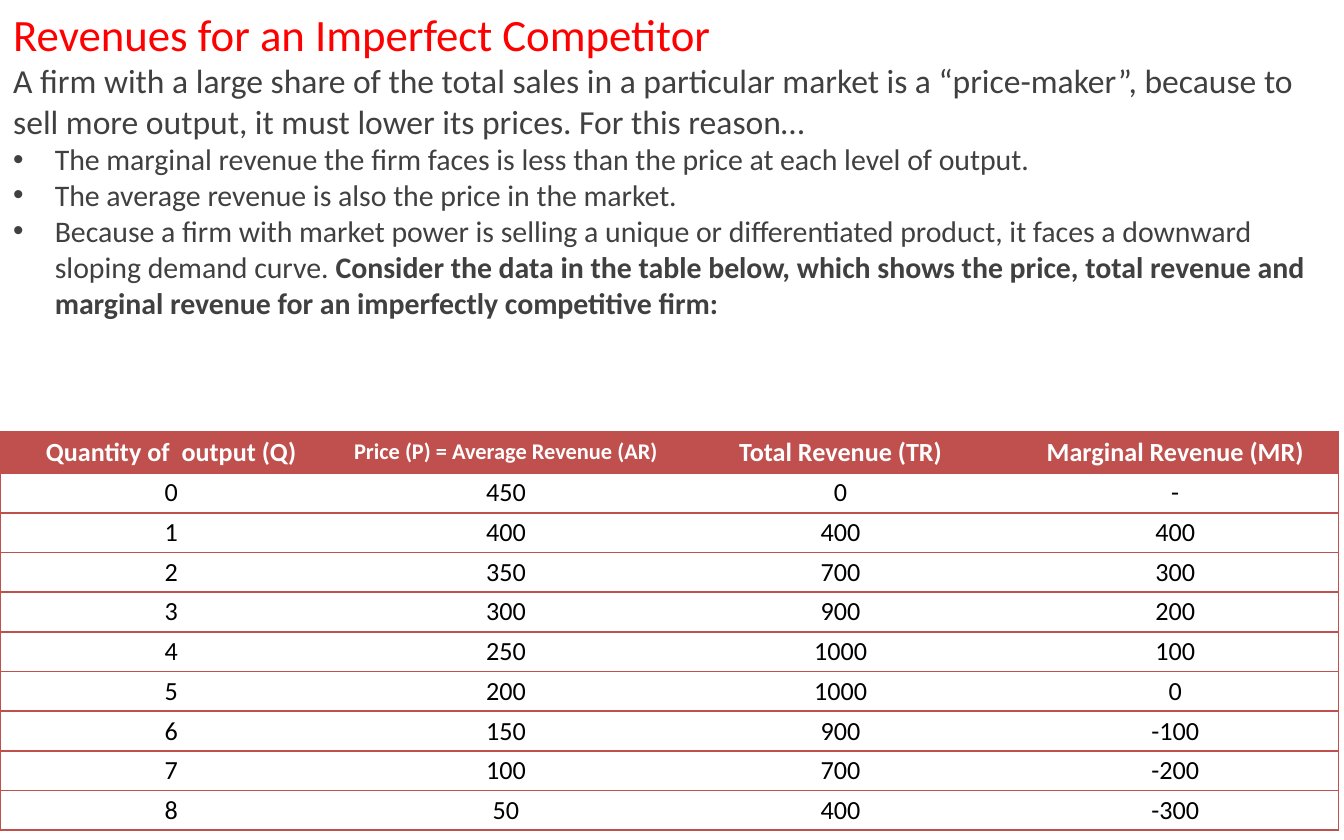
"""Build a slide on the revenues of an imperfect competitor."""
from lxml import etree
from pptx import Presentation
from pptx.dml.color import RGBColor
from pptx.enum.text import MSO_ANCHOR, MSO_AUTO_SIZE, PP_ALIGN
from pptx.oxml.ns import qn
from pptx.util import Inches, Pt

CENTER = PP_ALIGN.CENTER
TOP, MIDDLE = MSO_ANCHOR.TOP, MSO_ANCHOR.MIDDLE
GROW = MSO_AUTO_SIZE.SHAPE_TO_FIT_TEXT
FONT = "Calibri"
NO_STYLE = "{2D5ABB26-0587-4C30-8999-92F81FD0307C}"
COLORS = {"title": "FF0000", "body": "404040", "accent": "C0504D",
          "white": "FFFFFF", "black": "000000"}


def style_run(run, size, color, bold=False):
    run.font.name = FONT
    run.font.size = Pt(size)
    run.font.bold = bold
    run.font.color.rgb = RGBColor.from_string(COLORS[color])


def add_border(cell, side):
    line = etree.SubElement(cell._tc.get_or_add_tcPr(), qn(f"a:ln{side}"), w=str(Pt(1)))
    fill = etree.SubElement(line, qn("a:solidFill"))
    etree.SubElement(fill, qn("a:srgbClr"), val=COLORS["accent"])


prs = Presentation()
prs.slide_width, prs.slide_height = Inches(10), Inches(6.25)
slide = prs.slides.add_slide(prs.slide_layouts[6])

PARAGRAPHS = [
    (24, "title", False, ["Revenues for an Imperfect Competitor"]),
    (18, "body", False, [
        "A firm with a large share of the total sales in a particular market is a “price-maker”, "
        "because to sell more output, it must lower its prices. For this reason…"]),
    (16, "body", True, [
        "The marginal revenue the firm faces is less than the price at each level of output."]),
    (16, "body", True, ["The average revenue is also the price in the market."]),
    (16, "body", True, [
        "Because a firm with market power is selling a unique or differentiated product, "
        "it faces a downward sloping demand curve. ",
        "Consider the data in the table below, which shows the price, total revenue and "
        "marginal revenue for an imperfectly competitive firm:"]),
]
explanation = slide.shapes.add_textbox(0, 0, Inches(10), Inches(2.46)).text_frame
explanation.word_wrap = True
explanation.auto_size = GROW
for index, (size, color, bulleted, parts) in enumerate(PARAGRAPHS):
    paragraph = explanation.add_paragraph() if index else explanation.paragraphs[0]
    for position, part in enumerate(parts):
        run = paragraph.add_run()
        run.text = part
        style_run(run, size, color, bold=position > 0)
    if bulleted:
        properties = paragraph._p.get_or_add_pPr()
        properties.set("marL", str(Inches(0.31)))
        properties.set("indent", str(Inches(-0.31)))
        etree.SubElement(properties, qn("a:buFont"), typeface="Arial")
        etree.SubElement(properties, qn("a:buChar"), char="•")

REVENUES = [
    ["Quantity of  output (Q)", "Price (P) = Average Revenue (AR)",
     "Total Revenue (TR)", "Marginal Revenue (MR)"],
    ["0", "450", "0", "-"],
    ["1", "400", "400", "400"],
    ["2", "350", "700", "300"],
    ["3", "300", "900", "200"],
    ["4", "250", "1000", "100"],
    ["5", "200", "1000", "0"],
    ["6", "150", "900", "-100"],
    ["7", "100", "700", "-200"],
    ["8", "50", "400", "-300"],
]
TABLE_HEIGHT, HEADER_HEIGHT = Inches(2.97), Inches(0.31)
row_count, column_count = len(REVENUES), len(REVENUES[0])
revenue_table = slide.shapes.add_table(
    row_count, column_count, 0, Inches(3.21), Inches(9.96), TABLE_HEIGHT).table
revenue_table.first_row = revenue_table.horz_banding = False
revenue_table._tbl.tblPr.find(qn("a:tableStyleId")).text = NO_STYLE

for r, values in enumerate(REVENUES):
    header = r == 0
    revenue_table.rows[r].height = (
        HEADER_HEIGHT if header else (TABLE_HEIGHT - HEADER_HEIGHT) // (row_count - 1))
    for c, value in enumerate(values):
        cell = revenue_table.cell(r, c)
        cell.margin_left = cell.margin_right = Inches(0.03)
        cell.margin_top = cell.margin_bottom = Inches(0.03)
        cell.vertical_anchor = MIDDLE if header else TOP
        sides = ("L" if c == 0 else "") + ("R" if c == column_count - 1 else "") + "TB"
        for side in sides:
            add_border(cell, side)
        cell.fill.solid()
        cell.fill.fore_color.rgb = RGBColor.from_string(COLORS["accent" if header else "white"])
        paragraph = cell.text_frame.paragraphs[0]
        paragraph.text = value
        paragraph.alignment = CENTER
        paragraph.space_before = Pt(4.5)
        if header:
            paragraph.space_after = Pt(4.5)
        paragraph._p.get_or_add_pPr().set("marL", str(Inches(0.06)))
        style_run(paragraph.runs[0], 12 if header and c == 1 else 14,
                  "white" if header else "black", bold=header)

prs.save("out.pptx")
